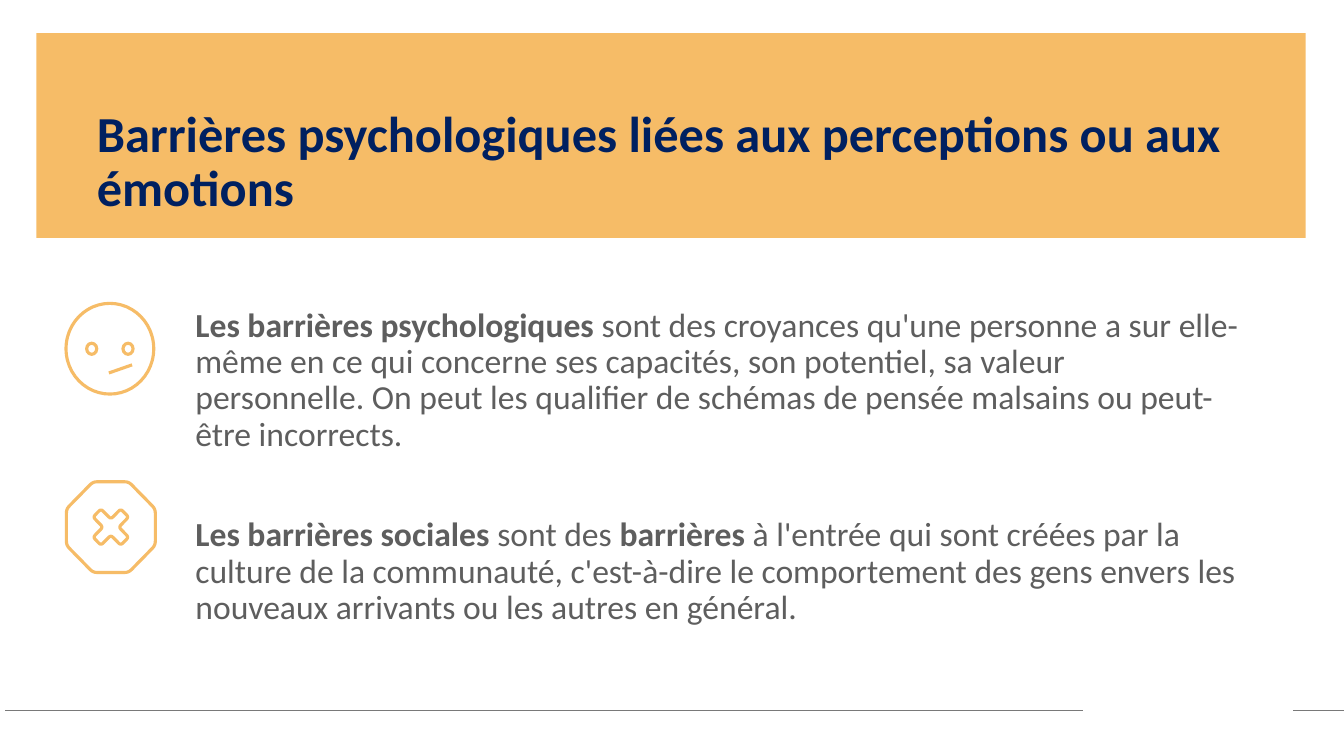
from lxml import etree
from pptx import Presentation, util as u
from pptx.dml import color as col
from pptx.enum import shapes as sh, text as tx
from pptx.oxml import ns

HEX = {"gold": "F6BC67", "navy": "002060", "grey": "5E5E5E", "rule": "797979"}

BODY = [
    [("Les barrières psychologiques", True),
     (" sont des croyances qu'une personne a sur elle-même en ce qui concerne "
      "ses capacités, son potentiel, sa valeur personnelle. On peut les "
      "qualifier de schémas de pensée malsains ou peut-être incorrects.", False)],
    [("Les barrières sociales", True),
     (" sont des ", False),
     ("barrières", True),
     (" à l'entrée qui sont créées par la culture de la communauté, "
      "c'est-à-dire le comportement des gens envers les nouveaux arrivants "
      "ou les autres en général.", False)],
]


def apply(thing, form):
    for key, val in form.items():
        setattr(thing, key, val)


def tint(name):
    return col.RGBColor.from_string(HEX[name])


def place(shape, *box):
    names = ("left", "top", "width", "height")
    apply(shape, {name: u.Inches(val) for name, val in zip(names, box)})


def outline(shape, name="gold", width=2.25):
    shape.line.color.rgb = tint(name)
    shape.line.width = u.Pt(width)


def write(frame, paras, size, shade, gap=0):
    apply(frame, {"word_wrap": True, "auto_size": tx.MSO_AUTO_SIZE.NONE,
                  "vertical_anchor": tx.MSO_ANCHOR.TOP})
    for i, runs in enumerate(paras):
        para = frame.add_paragraph() if i else frame.paragraphs[0]
        apply(para, {"alignment": tx.PP_ALIGN.LEFT, "line_spacing": 0.9,
                     "space_before": u.Pt(gap if i else 0)})
        for words, bold in runs:
            run = para.add_run()
            run.text = words
            apply(run.font, {"name": "Calibri", "size": u.Pt(size), "bold": bold})
            run.font.color.rgb = tint(shade)


def add_line(slide, start, end, name="gold", width=2.25):
    ends = [u.Inches(val) for val in (*start, *end)]
    line = slide.shapes.add_connector(sh.MSO_CONNECTOR.STRAIGHT, *ends)
    outline(line, name, width)
    etree.SubElement(line.element.spPr, ns.qn("a:effectLst"))


def add_ring(slide, mid_x, mid_y, width, height):
    box = (mid_x - width / 2, mid_y - height / 2, width, height)
    ring = slide.shapes.add_shape(sh.MSO_SHAPE.OVAL, *map(u.Inches, box))
    ring.shadow.inherit = False
    ring.fill.background()
    outline(ring)


def add_banner(slide):
    banner = slide.shapes.add_shape(
        sh.MSO_SHAPE.RECTANGLE, *map(u.Inches, (0.36, 0.33, 12.59, 2.03)))
    banner.shadow.inherit = False
    banner.fill.solid()
    banner.fill.fore_color.rgb = tint("gold")
    banner.line.fill.background()


def add_title(slide):
    title = slide.shapes.title
    place(title, 0.86, 1.03, 11.55, 0.76)
    words = "Barrières psychologiques liées aux perceptions ou aux émotions"
    write(title.text_frame, [[(words, True)]], 36, "navy")
    title.element.getparent().append(title.element)


def add_body(slide):
    box = slide.shapes.add_textbox(*map(u.Inches, (1.84, 3.01, 10.57, 3.55)))
    write(box.text_frame, BODY, 24, "grey", gap=46)


def add_face(slide):
    add_ring(slide, 1.09, 3.46, 0.87, 0.9)
    for eye in (0.91, 1.27):
        add_ring(slide, eye, 3.46, 0.1, 0.11)
    add_line(slide, (1.08, 3.7), (1.31, 3.62))


def spin(points):
    full = []
    for turn in range(4):
        full += points
        points = [(-y, x) for x, y in points]
    return full


def soften(points, cut, steps=4):
    curve = []
    for i, (x, y) in enumerate(points):
        near = []
        for px, py in (points[i - 1], points[(i + 1) % len(points)]):
            part = cut / ((px - x) ** 2 + (py - y) ** 2) ** 0.5
            near.append((x + (px - x) * part, y + (py - y) * part))
        (ax, ay), (bx, by) = near
        for step in range(steps + 1):
            t = step / steps
            a, m, b = (1 - t) ** 2, 2 * t * (1 - t), t * t
            curve.append((a * ax + m * x + b * bx, a * ay + m * y + b * by))
    return curve


def add_stop(slide):
    rim = soften(spin([(-0.18, -0.45), (0.18, -0.45)]), 0.04)
    cross = soften(spin([(0, -0.08), (0.1, -0.18), (0.18, -0.1)]), 0.03)
    pen = None
    for loop in (rim, cross):
        spots = [(u.Inches(1.1 + 0.98 * x), u.Inches(5.23 + y)) for x, y in loop]
        if pen:
            pen.move_to(*spots[0])
        else:
            pen = slide.shapes.build_freeform(*spots[0])
        pen.add_line_segments(spots[1:], close=True)
    sign = pen.convert_to_shape()
    sign.shadow.inherit = False
    sign.fill.background()
    outline(sign)


def main():
    deck = Presentation()
    apply(deck, {"slide_width": u.Inches(13.33), "slide_height": u.Inches(7.5)})
    slide = deck.slides.add_slide(deck.slide_layouts.get_by_name("Title Only"))
    add_banner(slide)
    for start, end in ((10.74, 0.05), (13.33, 12.82)):
        add_line(slide, (start, 7.05), (end, 7.05), "rule", 0.5)
    add_title(slide)
    add_body(slide)
    add_stop(slide)
    add_face(slide)
    deck.save("out.pptx")


if __name__ == "__main__":
    main()
